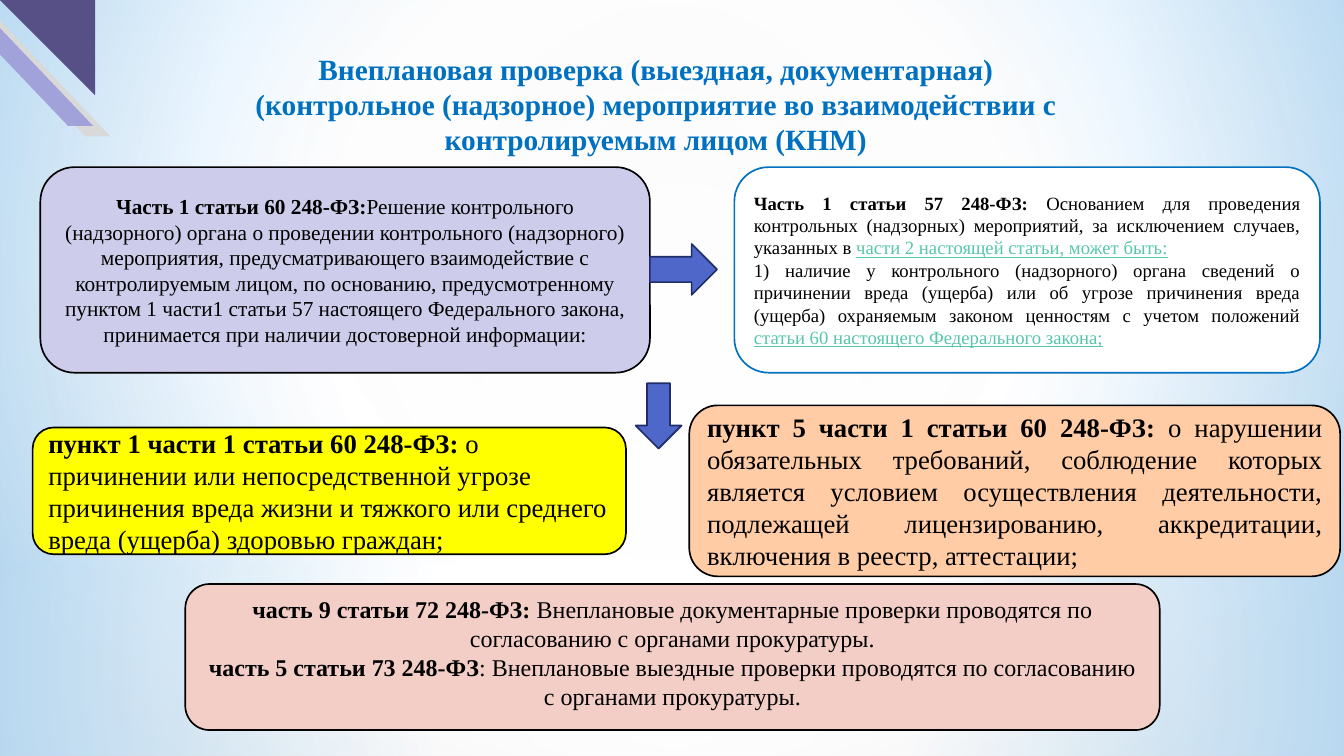
"""Build the slide on unplanned inspections."""
from lxml import etree
from pptx import Presentation
from pptx import util as u
from pptx.dml.color import RGBColor
from pptx.enum import shapes, text
from pptx.oxml.ns import qn

KIND, ALIGN, ANCHOR = shapes.MSO_SHAPE, text.PP_ALIGN, text.MSO_ANCHOR
WIDE, HIGH = 14, 7.87
FACE, BLACK, BLUE, LINK = "Times New Roman", "000000", "0070C0", "56C7AA"
MID = (50, 50, 50, 50)

BACK = ([(0, "F4F4F4", 100), (60, "FFFFFF", 100), (100, "CCCCCC", 100)],
        (20, 10, 20, 60))
# kind, place, stops, focus
GLOWS = [
    (KIND.RECTANGLE, (0, 5.86, WIDE, 2.01),
     [(0, "FFFFFF", 91), (37, "FFFFFF", 76), (100, "B4DCFA", 79)], MID),
    (KIND.RECTANGLE, (0, 0, WIDE, 5.86),
     [(0, "FFFFFF", 89), (48, "FFFFFF", 62), (100, "B4DCFA", 79)], MID),
    (KIND.RECTANGLE, (0, 4.33, WIDE, 2.62),
     [(0, "FFFFFF", 0), (29, "FFFFFF", 30), (45, "B4DCFA", 40),
      (55, "FFFFFF", 26), (65, "B4DCFA", 60), (100, "FFFFFF", 0)], None),
    (KIND.OVAL, (0, 1.84, WIDE, 5.86),
     [(0, "FFFFFF", 100), (56, "FFFFFF", 0)], MID),
]
CORNER = [
    (KIND.PARALLELOGRAM, (-0.36, 0.11, 1.51, 1.31), "D9D9D9", ("flipH",)),
    (KIND.PARALLELOGRAM, (-0.54, 0, 1.51, 1.31), "A2A2DA", ("flipH",)),
    (KIND.RIGHT_TRIANGLE, (0, 0, 0.99, 0.99), "565087", ("flipH", "flipV")),
]
TITLE = [
    [("Внеплановая проверка (выездная, документарная)", "b")],
    [("(контрольное (надзорное) мероприятие во взаимодействии с "
      "контролируемым лицом (КНМ)", "b")],
]
BOXES = [
    dict(at=(0.42, 1.74, 6.35, 2.14), fill="CDCDEB", size=16, align=ALIGN.CENTER, paras=[
        [("Часть 1 статьи 60 248-ФЗ:", "b"),
         ("Решение контрольного (надзорного) органа о проведении контрольного "
          "(надзорного) мероприятия, предусматривающего взаимодействие с "
          "контролируемым лицом, по основанию, предусмотренному пунктом 1 части1 "
          "статьи 57 настоящего Федерального закона, принимается при наличии "
          "достоверной информации:", "")]]),
    dict(at=(0.34, 4.45, 6.18, 1.32), fill="FFFF00", size=20, align=ALIGN.LEFT, paras=[
        [("пункт 1 части 1 статьи 60 248-ФЗ: ", "b"),
         ("о причинении или непосредственной угрозе причинения вреда жизни и "
          "тяжкого или среднего вреда (ущерба) здоровью граждан;", "")]]),
    dict(at=(7.18, 4.22, 6.78, 1.78), fill="FFCCA6", size=20, align=ALIGN.JUSTIFY, paras=[
        [("пункт 5 части 1 статьи 60 248-ФЗ: ", "b"),
         ("о нарушении обязательных требований, соблюдение которых является "
          "условием осуществления деятельности, подлежащей лицензированию, "
          "аккредитации, включения в реестр, аттестации;", "")]]),
    dict(at=(1.93, 6.08, 10.15, 1.52), fill="F2CEC6", size=18, align=ALIGN.CENTER,
         foot=0.15, paras=[
        [("часть 9 статьи 72 248-ФЗ: ", "b"),
         ("Внеплановые документарные проверки проводятся по согласованию с "
          "органами прокуратуры.", "")],
        [("часть 5 статьи 73 248-ФЗ", "b"),
         (": Внеплановые выездные проверки проводятся по согласованию с "
          "органами прокуратуры.", "")]]),
    dict(at=(7.65, 1.74, 6.1, 2.14), fill="FFFFFF", line=BLUE, size=14,
         align=ALIGN.JUSTIFY, paras=[
        [("Часть 1 статьи 57 248-ФЗ: ", "b"),
         ("Основанием для проведения контрольных (надзорных) мероприятий, за "
          "исключением случаев, указанных в ", ""),
         ("части 2 настоящей статьи, может быть:", "u")],
        [("1) наличие у контрольного (надзорного) органа сведений о причинении "
          "вреда (ущерба) или об угрозе причинения вреда (ущерба) охраняемым "
          "законом ценностям с учетом положений ", ""),
         ("статьи 60 настоящего Федерального закона;", "u")]]),
]
ARROWS = [
    (KIND.DOWN_ARROW, (6.62, 3.99, 0.48, 0.68)),
    (KIND.RIGHT_ARROW, (6.77, 2.54, 0.7, 0.53)),
]


def paint(fmt, tone):
    """Give a fill or font colour format a hex colour."""
    fmt.rgb = RGBColor.from_string(tone)


def blend(owner, stops, focus):
    """Fill a shape or background with a gradient."""
    owner.fill.solid()
    paint(owner.fill.fore_color, "FFFFFF")
    old = next(owner._element.iter(qn("a:solidFill")))
    grad = etree.Element(qn("a:gradFill"), rotWithShape="1")
    row = etree.SubElement(grad, qn("a:gsLst"))
    for pos, tone, alpha in stops:
        stop = etree.SubElement(row, qn("a:gs"), pos=str(pos * 1000))
        hue = etree.SubElement(stop, qn("a:srgbClr"), val=tone)
        if alpha < 100:
            etree.SubElement(hue, qn("a:alpha"), val=str(alpha * 1000))
    if focus:
        way = etree.SubElement(grad, qn("a:path"), path="circle")
        sides = {k: str(v * 1000) for k, v in zip("ltrb", focus)}
        etree.SubElement(way, qn("a:fillToRect"), **sides)
    else:
        etree.SubElement(grad, qn("a:lin"), ang="5400000", scaled="0")
    old.getparent().replace(old, grad)


def draw(slide, kind, at, fill=None, line=None):
    """Add a preset shape without a shadow."""
    shape = slide.shapes.add_shape(kind, *map(u.Inches, at))
    shape.shadow.inherit = False
    if fill:
        shape.fill.solid()
        paint(shape.fill.fore_color, fill)
    if line:
        paint(shape.line.color, line)
        shape.line.width = u.Pt(1.25)
    else:
        shape.line.fill.background()
    return shape


def write(shape, paras, size, align, anchor, tone=BLACK, foot=0.05):
    """Set the text of a shape from lists of runs."""
    frame = shape.text_frame
    look = dict(word_wrap=True, auto_size=text.MSO_AUTO_SIZE.NONE,
                vertical_anchor=anchor, margin_left=u.Inches(0.1),
                margin_right=u.Inches(0.1), margin_top=u.Inches(0.05),
                margin_bottom=u.Inches(foot))
    for key, val in look.items():
        setattr(frame, key, val)
    for i, runs in enumerate(paras):
        para = frame.add_paragraph() if i else frame.paragraphs[0]
        para.alignment = align
        for words, mark in runs:
            run = para.add_run()
            run.text = words
            font = dict(name=FACE, size=u.Pt(size), bold=mark == "b",
                        underline=mark == "u")
            for key, val in font.items():
                setattr(run.font, key, val)
            paint(run.font.color, LINK if mark == "u" else tone)


def main():
    """Build and save the slide."""
    deck = Presentation()
    deck.slide_width, deck.slide_height = u.Inches(WIDE), u.Inches(HIGH)
    slide = deck.slides.add_slide(deck.slide_layouts[5])
    blend(slide.background, *BACK) if hasattr(slide.background, "_element") else None
    for kind, at, stops, focus in GLOWS:
        blend(draw(slide, kind, at), stops, focus)
    for kind, at, fill, flips in CORNER:
        shape = draw(slide, kind, at, fill)
        if kind == KIND.PARALLELOGRAM:
            shape.adjustments[0] = 0.953
        for flip in flips:
            shape._element.spPr.xfrm.set(flip, "1")
    title = slide.shapes.title
    place = zip(("left", "top", "width", "height"), (1.49, 0.48, 10.68, 2.52))
    for key, val in place:
        setattr(title, key, u.Inches(val))
    write(title, TITLE, 22, ALIGN.CENTER, ANCHOR.TOP, BLUE)
    slide.shapes._spTree.append(title._element)
    for box in BOXES:
        shape = draw(slide, KIND.ROUNDED_RECTANGLE, box["at"], box["fill"],
                     box.get("line", BLACK))
        write(shape, box["paras"], box["size"], box["align"], ANCHOR.MIDDLE,
              foot=box.get("foot", 0.05))
    for kind, at in ARROWS:
        draw(slide, kind, at, "4E67C8", "1F2E69")
    deck.save("out.pptx")


if __name__ == "__main__":
    main()
